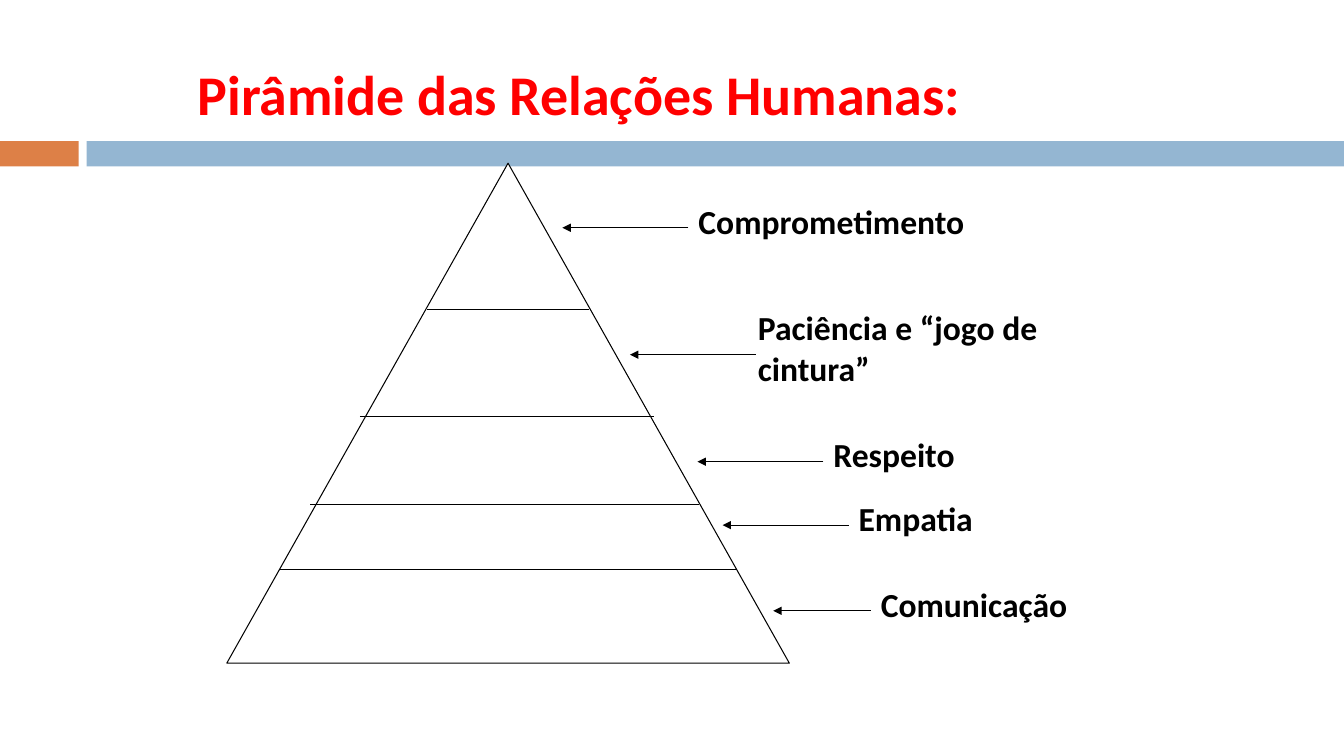
from dataclasses import dataclass

from lxml import etree
from pptx import Presentation
from pptx.dml.color import RGBColor
from pptx.enum.shapes import MSO_CONNECTOR, MSO_SHAPE
from pptx.enum.text import MSO_ANCHOR, MSO_AUTO_SIZE, PP_ALIGN
from pptx.oxml.ns import qn
from pptx.shapes.autoshape import Shape
from pptx.slide import Slide
from pptx.text.text import TextFrame
from pptx.util import Pt

STRAIGHT = MSO_CONNECTOR.STRAIGHT
RECT, TRIANGLE = MSO_SHAPE.RECTANGLE, MSO_SHAPE.ISOSCELES_TRIANGLE
LEFT, TOP, MIDDLE = PP_ALIGN.LEFT, MSO_ANCHOR.TOP, MSO_ANCHOR.MIDDLE
GROW, FIXED = MSO_AUTO_SIZE.SHAPE_TO_FIT_TEXT, MSO_AUTO_SIZE.NONE


@dataclass(frozen=True)
class Theme:
    font: str = "Calibri"
    title_size: float = 40
    label_size: float = 24
    line_width: float = 0.75
    ink: str = "000000"
    paper: str = "FFFFFF"
    red: str = "FF0000"
    orange: str = "DD8047"
    blue: str = "94B6D2"


@dataclass(frozen=True)
class Box:
    left: float
    top: float
    width: float
    height: float


@dataclass(frozen=True)
class Rung:
    """A level line across the pyramid."""
    left: float
    right: float
    y: float


@dataclass(frozen=True)
class Label:
    """A level name and the arrow that leads from it to the pyramid."""
    text: str
    box: Box
    tail: float
    y: float
    reach: float = 90


THEME = Theme()
TITLE = Box(133.9, 21.6, 705.6, 90)
PYRAMID = Box(162, 116.6, 401.8, 357.1)
BARS = (
    (Box(0, 100.8, 56.2, 18), THEME.orange),
    (Box(61.9, 100.8, 898.1, 18), THEME.blue),
)
RUNGS = (
    Rung(305.3, 420.5, 221),
    Rung(257, 467.3, 297.4),
    Rung(221.8, 499, 360.7),
    Rung(200.2, 525.6, 406.8),
)
LABELS = (
    Label("Comprometimento", Box(491.8, 139.7, 234, 36.7), 491.8, 162.7),
    Label("Paciência e “jogo de cintura”", Box(534.2, 216, 234, 65.5), 540, 253.4),
    Label("Respeito", Box(588.2, 306.7, 234, 36.7), 588.2, 329.8),
    Label("Empatia", Box(606.2, 352.1, 234, 36.7), 606.2, 375.1),
    Label("Comunicação", Box(622.1, 413.3, 182.2, 36.7), 622.1, 436.3, 69.8),
)


def place(box: Box) -> tuple[Pt, Pt, Pt, Pt]:
    return Pt(box.left), Pt(box.top), Pt(box.width), Pt(box.height)


def write(frame: TextFrame, text: str, *, size: float, color: str,
          anchor: MSO_ANCHOR = TOP, fit: MSO_AUTO_SIZE = GROW) -> None:
    frame.word_wrap = True
    frame.auto_size = fit
    frame.vertical_anchor = anchor
    par = frame.paragraphs[0]
    par.alignment = LEFT
    run = par.add_run()
    run.text = text
    run.font.name = THEME.font
    run.font.size = Pt(size)
    run.font.bold = True
    run.font.color.rgb = RGBColor.from_string(color)


def add_solid(slide: Slide, kind: MSO_SHAPE, box: Box, fill: str) -> Shape:
    shape = slide.shapes.add_shape(kind, *place(box))
    shape.shadow.inherit = False
    shape.fill.solid()
    shape.fill.fore_color.rgb = RGBColor.from_string(fill)
    shape.line.fill.background()
    return shape


def add_line(slide: Slide, start: float, end: float, y: float,
             arrow: bool = False) -> None:
    """Draw a level line, with an arrowhead at its end if asked."""
    line = slide.shapes.add_connector(STRAIGHT, Pt(start), Pt(y), Pt(end), Pt(y))
    line.line.color.rgb = RGBColor.from_string(THEME.ink)
    line.line.width = Pt(THEME.line_width)
    if arrow:
        head = etree.SubElement(line.line._get_or_add_ln(), qn("a:tailEnd"))
        head.set("type", "triangle")
    etree.SubElement(line._element.spPr, qn("a:effectLst"))


def add_title(slide: Slide) -> None:
    title = slide.shapes.title
    title.left, title.top, title.width, title.height = place(TITLE)
    write(title.text_frame, "Pirâmide das Relações Humanas:",
          size=THEME.title_size, color=THEME.red, anchor=MIDDLE, fit=FIXED)


def add_pyramid(slide: Slide) -> None:
    shape = add_solid(slide, TRIANGLE, PYRAMID, THEME.paper)
    shape.line.color.rgb = RGBColor.from_string(THEME.ink)
    shape.line.width = Pt(THEME.line_width)
    for rung in RUNGS:
        add_line(slide, rung.left, rung.right, rung.y)


def add_label(slide: Slide, label: Label) -> None:
    box = slide.shapes.add_textbox(*place(label.box))
    write(box.text_frame, label.text, size=THEME.label_size, color=THEME.ink)
    add_line(slide, label.tail, label.tail - label.reach, label.y, arrow=True)


def main() -> None:
    deck = Presentation()
    deck.slide_width, deck.slide_height = Pt(960), Pt(540)
    slide = deck.slides.add_slide(deck.slide_layouts.get_by_name("Title Only"))
    for box, fill in BARS:
        add_solid(slide, RECT, box, fill)
    add_title(slide)
    add_pyramid(slide)
    for label in LABELS:
        add_label(slide, label)
    deck.save("out.pptx")


if __name__ == "__main__":
    main()
